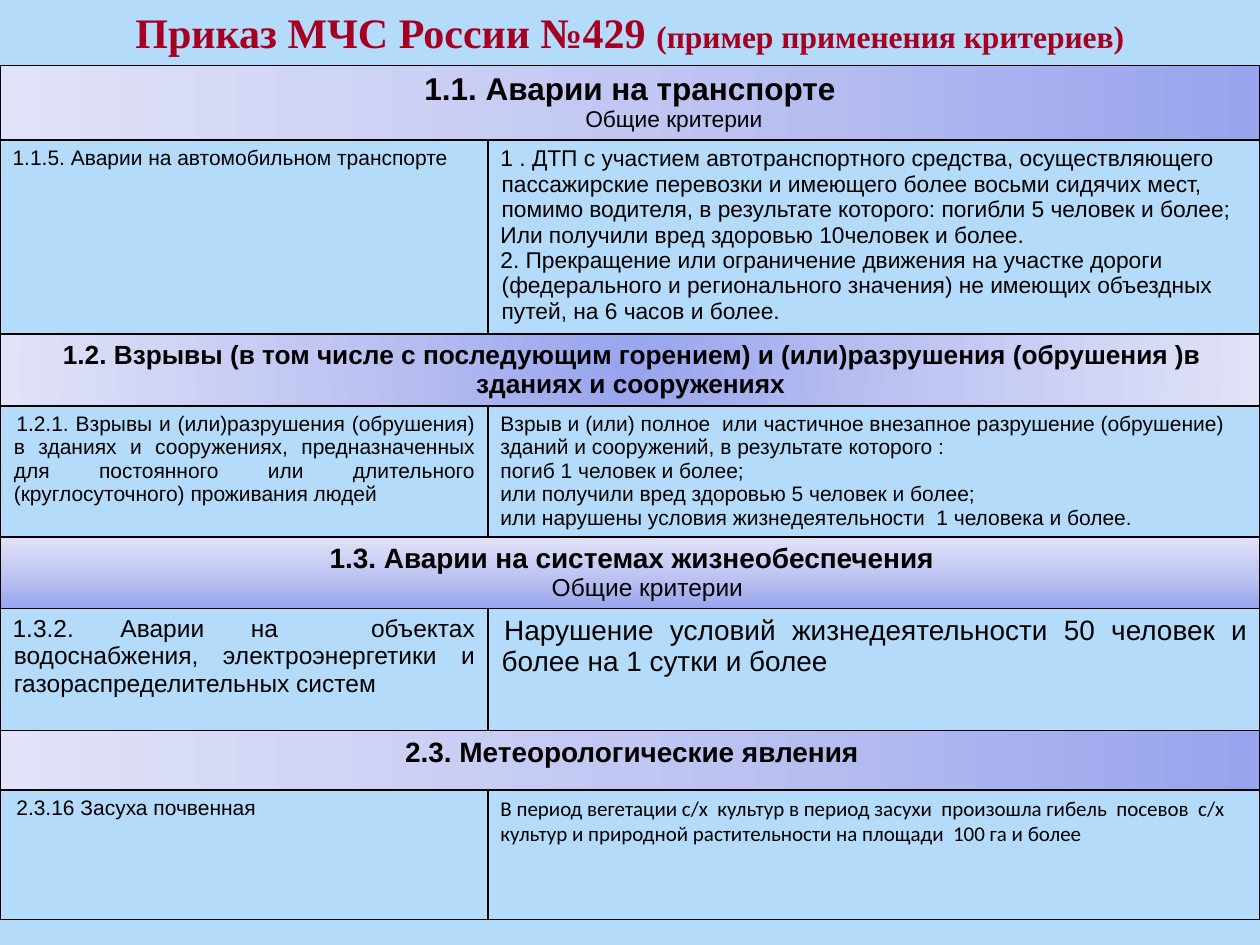
from dataclasses import dataclass
from typing import Optional

from lxml.etree import SubElement
from pptx import Presentation
from pptx.dml.color import RGBColor
from pptx.enum.text import MSO_AUTO_SIZE as AutoSize, PP_ALIGN as Align
from pptx.oxml.ns import qn
from pptx.util import Pt


@dataclass(frozen=True)
class Theme:
    background: str = "B4DCFA"
    title: str = "A50021"
    ink: str = "000000"
    gradient: tuple = ((0, "98A4ED"), (50, "C1C7F2"), (100, "E1E3F8"))
    title_font: str = "Times New Roman"
    body_font: str = "Arial"
    note_font: str = "Calibri"
    title_size: float = 24
    heading: float = 18
    section: float = 16
    long_section: float = 15
    medium: float = 14
    criteria: float = 13
    small: float = 12
    border: float = 1


THEME = Theme()
HANGING = (0.72, -0.72)
INDENTED = (0.72, 1.44)


@dataclass(frozen=True)
class Line:
    text: str
    size: float
    align: Align = Align.LEFT
    indent: tuple = (0, 0)
    bold: bool = False
    font: str = THEME.body_font


@dataclass(frozen=True)
class Row:
    height: float
    cells: tuple  # one tuple of lines per cell; a single one spans the row
    angle: Optional[int] = None  # gradient direction; None means radial


def add_span(para, text: str, size: float, font: str, color: str, bold: bool) -> None:
    span = para.add_run()
    span.text = text
    span.font.size = Pt(size)
    span.font.name = font
    span.font.bold = bold
    span.font.color.rgb = RGBColor.from_string(color)


def write_lines(frame, lines: tuple) -> None:
    for index, line in enumerate(lines):
        para = frame.add_paragraph() if index else frame.paragraphs[0]
        para.alignment = line.align
        props = para._p.get_or_add_pPr()
        props.set("marL", str(Pt(line.indent[0])))
        props.set("indent", str(Pt(line.indent[1])))
        add_span(para, line.text, line.size, line.font, THEME.ink, line.bold)


def add_borders(cell) -> None:
    props = cell._tc.get_or_add_tcPr()
    for side in ("a:lnL", "a:lnR", "a:lnT", "a:lnB"):
        edge = SubElement(props, qn(side), w=str(Pt(THEME.border)))
        fill = SubElement(edge, qn("a:solidFill"))
        SubElement(fill, qn("a:srgbClr"), val=THEME.ink)


def add_gradient(cell, angle: Optional[int]) -> None:
    fill = SubElement(cell._tc.get_or_add_tcPr(), qn("a:gradFill"), rotWithShape="1")
    stops = SubElement(fill, qn("a:gsLst"))
    for position, color in THEME.gradient:
        stop = SubElement(stops, qn("a:gs"), pos=str(position * 1000))
        SubElement(stop, qn("a:srgbClr"), val=color)
    if angle is None:
        radial = SubElement(fill, qn("a:path"), path="circle")
        SubElement(radial, qn("a:fillToRect"), l="50000", t="50000", r="50000", b="50000")
    else:
        SubElement(fill, qn("a:lin"), ang=str(angle * 60000), scaled="1")


def add_criteria_table(page, top: float, widths: tuple, rows: tuple) -> None:
    height = sum(row.height for row in rows)
    table = page.shapes.add_table(len(rows), len(widths), Pt(0), Pt(top),
                                  Pt(sum(widths)), Pt(height)).table
    table.first_row = table.horz_banding = False
    for column, width in zip(table.columns, widths):
        column.width = Pt(width)
    for index, row in enumerate(rows):
        table.rows[index].height = Pt(row.height)
        cells = list(table.rows[index].cells)
        is_section = len(row.cells) == 1
        if is_section:
            cells[0].merge(cells[-1])
        for cell in cells:
            add_borders(cell)
            if is_section:
                add_gradient(cell, row.angle)
            else:
                cell.fill.background()
        for cell, lines in zip(cells, row.cells):
            write_lines(cell.text_frame, lines)


def add_title(page, width: float, height: float) -> None:
    box = page.shapes.add_textbox(Pt(0), Pt(0), Pt(width), Pt(height))
    frame = box.text_frame
    frame.word_wrap = True
    frame.auto_size = AutoSize.SHAPE_TO_FIT_TEXT
    para = frame.paragraphs[0]
    para.alignment = Align.CENTER
    for text, size in (("Приказ МЧС России №429 ", THEME.title_size),
                       ("(пример применения критериев)", THEME.heading)):
        add_span(para, text, size, THEME.title_font, THEME.title, True)


ROWS = (
    # Transport accidents
    Row(42.5, ((
        Line("1.1. Аварии на транспорте", THEME.heading, Align.CENTER, HANGING, True),
        Line("Общие критерии", THEME.criteria, Align.CENTER, (50, 0)),
    ),), 180),
    Row(110.9, (
        (Line("1.1.5. Аварии на автомобильном транспорте", THEME.small),),
        tuple(Line(text, THEME.criteria, indent=HANGING) for text in (
            "1 . ДТП с участием автотранспортного средства, осуществляющего пассажирские "
            "перевозки и имеющего более восьми сидячих мест, помимо водителя, в результате "
            "которого: погибли 5 человек и более;",
            "Или получили вред здоровью 10человек и более.",
            "2. Прекращение или ограничение движения на участке дороги (федерального и "
            "регионального значения) не имеющих объездных путей, на 6 часов и более.")),
    )),
    # Explosions and collapses
    Row(41, ((
        Line("1.2. Взрывы (в том числе с последующим горением) и (или)разрушения "
             "(обрушения )в зданиях и сооружениях",
             THEME.long_section, Align.CENTER, INDENTED, True),
    ),)),
    Row(74.9, (
        (Line("1.2.1. Взрывы и (или)разрушения (обрушения) в зданиях и сооружениях, "
              "предназначенных для постоянного или длительного (круглосуточного) "
              "проживания людей", THEME.small, Align.JUSTIFY, INDENTED),),
        tuple(Line(text, THEME.small) for text in (
            "Взрыв и (или) полное  или частичное внезапное разрушение (обрушение) "
            "зданий и сооружений, в результате которого :",
            "погиб 1 человек и более;",
            "или получили вред здоровью 5 человек и более;",
            "или нарушены условия жизнедеятельности  1 человека и более.")),
    )),
    # Life-support systems
    Row(41, ((
        Line("1.3. Аварии на системах жизнеобеспечения", THEME.section,
             Align.CENTER, INDENTED, True),
        Line("Общие критерии", THEME.medium, Align.CENTER, (20, 0)),
    ),), 270),
    Row(69.8, (
        (Line("1.3.2. Аварии на  объектах водоснабжения, электроэнергетики и "
              "газораспределительных систем", THEME.medium, Align.JUSTIFY, HANGING),),
        (Line("Нарушение условий жизнедеятельности 50 человек и более на 1 сутки и более",
              THEME.section, Align.JUSTIFY, INDENTED),),
    )),
    # Weather events
    Row(33.8, ((
        Line("2.3. Метеорологические явления", THEME.section, Align.CENTER, INDENTED, True),
    ),), 180),
    Row(74.2, (
        (Line("2.3.16 Засуха почвенная", THEME.small, Align.JUSTIFY, INDENTED),),
        (Line("В период вегетации с/х  культур в период засухи  произошла гибель  посевов  "
              "с/х  культур и природной растительности на площади  100 га и более",
              THEME.small, font=THEME.note_font),),
    )),
)


def main() -> None:
    deck = Presentation()
    deck.slide_width, deck.slide_height = Pt(720), Pt(540)
    page = deck.slides.add_slide(deck.slide_layouts[6])
    page.background.fill.solid()
    page.background.fill.fore_color.rgb = RGBColor.from_string(THEME.background)
    add_criteria_table(page, 37.5, (278.8, 441.2), ROWS)
    add_title(page, 720, 36)
    deck.save("out.pptx")


if __name__ == "__main__":
    main()
